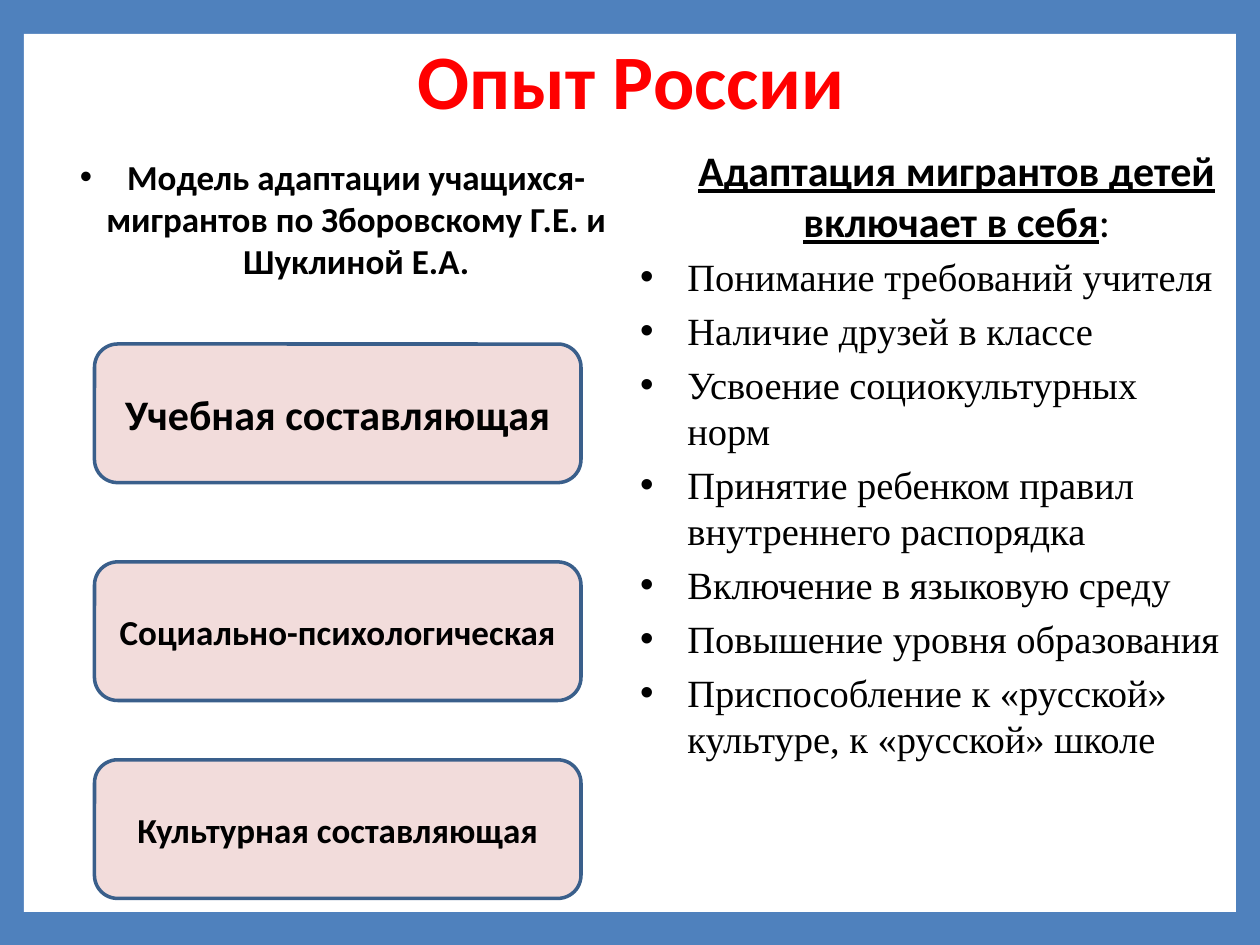
from dataclasses import dataclass

from lxml.etree import SubElement
from pptx import Presentation
from pptx.dml.color import RGBColor
from pptx.enum.shapes import MSO_SHAPE
from pptx.enum.text import MSO_ANCHOR, MSO_AUTO_SIZE, PP_ALIGN
from pptx.oxml.ns import qn
from pptx.util import Pt

COLORS = {
    "frame": "4F81BD",
    "page": "FFFFFF",
    "title": "FF0000",
    "text": "000000",
    "box": "F2DCDB",
    "box_line": "3A5F8B",
}
INDENT = Pt(27)
BOX_LEFT, BOX_WIDTH, BOX_HEIGHT = 54, 278, 79.2


@dataclass
class Component:
    text: str
    top: float
    size: int


COMPONENTS = [
    Component("Учебная составляющая", 196.6, 24),
    Component("Социально-психологическая", 321.1, 20),
    Component("Культурная составляющая", 434.2, 20),
]
ADAPTATION = [
    "Понимание требований учителя",
    "Наличие друзей в классе",
    "Усвоение социокультурных норм",
    "Принятие ребенком правил внутреннего распорядка",
    "Включение в языковую среду",
    "Повышение уровня образования",
    "Приспособление к «русской» культуре, к «русской» школе",
]


def rgb(name: str) -> RGBColor:
    return RGBColor.from_string(COLORS[name])


def place(sp, left: float, top: float, width: float, height: float):
    sp.left, sp.top, sp.width, sp.height = Pt(left), Pt(top), Pt(width), Pt(height)
    tf = sp.text_frame
    tf.margin_left = tf.margin_right = tf.margin_top = tf.margin_bottom = 0
    tf.word_wrap = True
    tf.auto_size = MSO_AUTO_SIZE.NONE
    return tf


def format_run(r, size: float, bold: bool = True, color: str = "text",
               name: str = "Calibri", underline: bool = False) -> None:
    f = r.font
    f.size, f.bold, f.name, f.underline = Pt(size), bold, name, underline
    f.color.rgb = rgb(color)


def format_list(p, before: float, align: PP_ALIGN, bullet: bool = True) -> None:
    p.alignment = align
    p.space_before = Pt(before)
    pPr = p._p.get_or_add_pPr()
    pPr.set("marL", str(INDENT))
    pPr.set("indent", str(-INDENT if bullet else 0))
    if bullet:
        SubElement(pPr, qn("a:buChar")).set("char", "•")
    else:
        SubElement(pPr, qn("a:buNone"))


def add_box(s, kind: MSO_SHAPE, left: float, top: float, width: float,
            height: float, fill: str):
    sp = s.shapes.add_shape(kind, Pt(left), Pt(top), Pt(width), Pt(height))
    sp.shadow.inherit = False
    sp.fill.solid()
    sp.fill.fore_color.rgb = rgb(fill)
    return sp


def add_component(s, item: Component) -> None:
    sp = add_box(s, MSO_SHAPE.ROUNDED_RECTANGLE, BOX_LEFT, item.top,
                 BOX_WIDTH, BOX_HEIGHT, "box")
    sp.line.color.rgb = rgb("box_line")
    sp.line.width = Pt(2)
    tf = sp.text_frame
    tf.text = item.text
    tf.vertical_anchor = MSO_ANCHOR.MIDDLE
    p = tf.paragraphs[0]
    p.alignment = PP_ALIGN.CENTER
    format_run(p.runs[0], item.size)


def main() -> None:
    prs = Presentation()
    prs.slide_width, prs.slide_height = Pt(720), Pt(540)
    s = prs.slides.add_slide(prs.slide_layouts[3])
    s.background.fill.solid()
    s.background.fill.fore_color.rgb = rgb("frame")

    page = add_box(s, MSO_SHAPE.RECTANGLE, 13.7, 19.4, 692.6, 501.8, "page")
    page.line.fill.background()
    s.shapes._spTree.insert(2, page._element)

    tf = place(s.shapes.title, 36.7, 0, 648, 90)
    tf.text = "Опыт России"
    tf.vertical_anchor = MSO_ANCHOR.MIDDLE
    p = tf.paragraphs[0]
    p.alignment = PP_ALIGN.CENTER
    format_run(p.runs[0], 44, color="title")

    tf = place(s.placeholders[1], 31, 88.6, 318.2, 430.6)
    tf.text = "Модель адаптации учащихся-мигрантов по Зборовскому Г.Е. и Шуклиной Е.А."
    p = tf.paragraphs[0]
    format_list(p, 4, PP_ALIGN.CENTER)
    format_run(p.runs[0], 20)

    tf = place(s.placeholders[2], 365.8, 82.8, 334.8, 436.3)
    tf.text = "Адаптация мигрантов детей включает в себя"
    p = tf.paragraphs[0]
    format_list(p, 4.8, PP_ALIGN.CENTER, bullet=False)
    format_run(p.runs[0], 24, underline=True)
    r = p.add_run()
    r.text = ":"
    format_run(r, 24, bold=False)
    for text in ADAPTATION:
        p = tf.add_paragraph()
        p.text = text
        format_list(p, 4.4, PP_ALIGN.LEFT)
        format_run(p.runs[0], 22, bold=False, name="Times New Roman")

    for item in COMPONENTS:
        add_component(s, item)

    prs.save("out.pptx")


if __name__ == "__main__":
    main()
